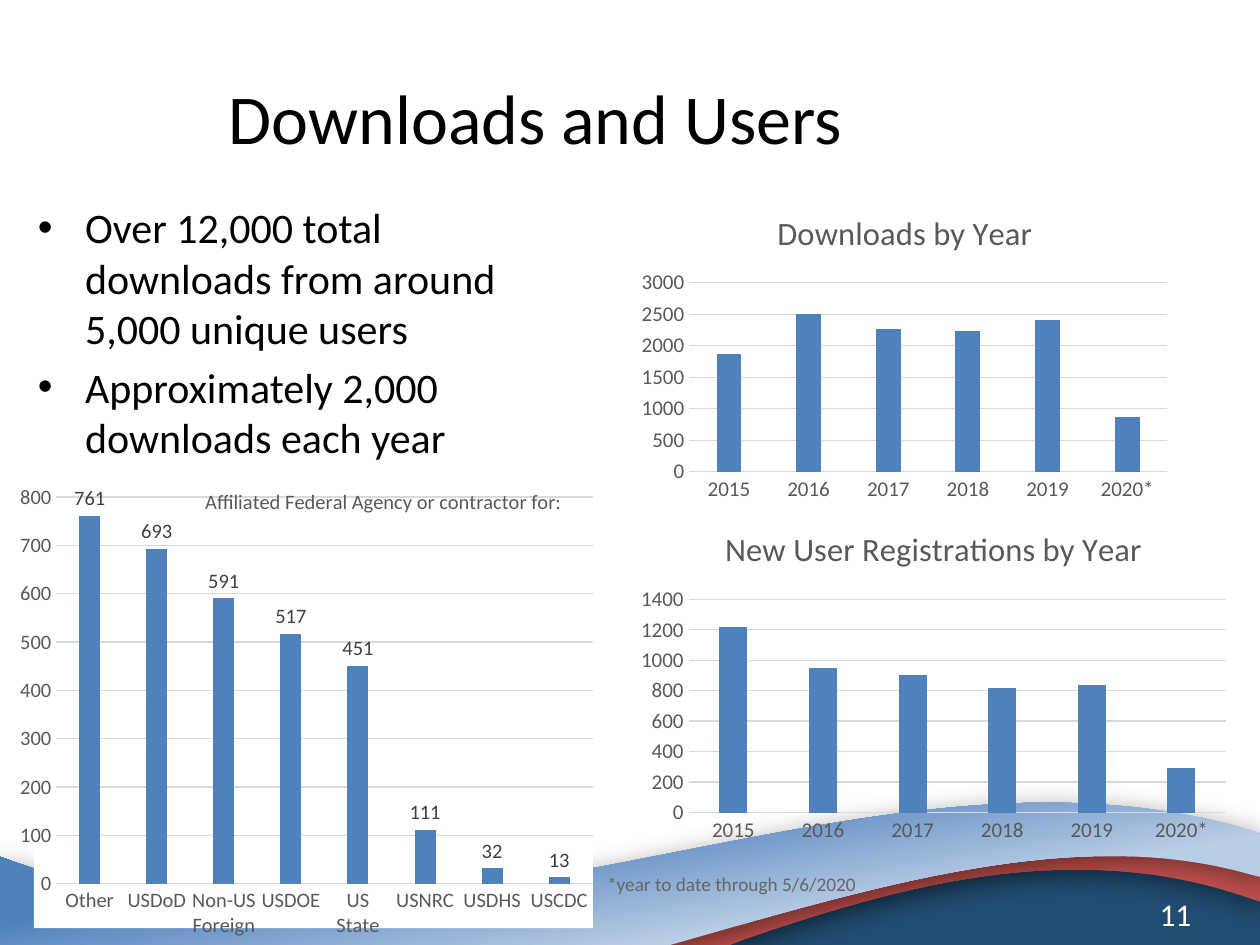
from lxml import etree
from pptx import Presentation
from pptx import util as u
from pptx.chart.data import CategoryChartData
from pptx.dml.color import RGBColor
from pptx.enum import chart as ch, text as tx
from pptx.oxml import parse_xml
from pptx.oxml.ns import nsdecls, qn

BLACK = RGBColor(0, 0, 0)
WHITE = RGBColor(255, 255, 255)
GRAY = RGBColor(0x59, 0x59, 0x59)
DARK = RGBColor(0x40, 0x40, 0x40)
NOTE = RGBColor(0x66, 0x66, 0x66)
GRID = RGBColor(0xD9, 0xD9, 0xD9)
BLUE = RGBColor(0x4F, 0x81, 0xBD)
PALE = RGBColor(0xB9, 0xCD, 0xE5)
RED = RGBColor(0xC0, 0x50, 0x4D)
WINE = RGBColor(0x95, 0x37, 0x35)
SKY = RGBColor(0x55, 0x8E, 0xD5)
NAVY = RGBColor(0x21, 0x4D, 0x71)

deck = Presentation()
deck.slide_width, deck.slide_height = u.Inches(10), u.Inches(7.5)
UNIT = deck.slide_width / 100
slide = deck.slides.add_slide(deck.slide_layouts[1])


def span(*cells):
    return [round(cell * UNIT) for cell in cells]


def style(font, size, color):
    font.name, font.size, font.bold = "Calibri", u.Pt(size), False
    font.color.rgb = color


waves = [
    ([(7.9, 70.8), (29.1, 74.2, 35.6, 75, 72.3, 67.3),
      (87.7, 67.3, 104.5, 67.1, 100.4, 69.5), (100.4, 75), (7.9, 75)],
     [(SKY, 0.21), (NAVY, 0.51)], 300),
    ([(84.5, 66.5), (85.4, 66.4, 86.2, 66.5, 87, 66.5),
      (91.3, 66.6, 95.4, 67, 99.2, 67.9), (100.4, 68.2), (100.4, 71.7),
      (98.9, 71.2), (85.4, 66.6, 72.2, 70, 59.2, 74.5), (57.9, 75),
      (7.9, 75), (7.9, 70.4), (8, 70.4), (26.4, 78.4, 58.6, 66.7, 84.5, 66.5)],
     [(RED, 0.28), (WINE, 0.62)], 100),
    ([(83.7, 63.7), (89.2, 63.8, 94.6, 64.4, 99.9, 66.1), (100.4, 66.3),
      (100.4, 69.7), (99.2, 69.4), (86.9, 65.9, 73.2, 69.3, 58.8, 73.4),
      (53.2, 75), (0, 75), (0, 68), (1.7, 68.6),
      (28.9, 78, 57.4, 63.6, 83.7, 63.7)],
     [(PALE, 0.3), (BLUE, 0.67)], 100),
]
for parts, stops, angle in waves:
    path = [span(*part[-2:]) for part in parts]
    pen = slide.shapes.build_freeform(*path[0])
    pen.add_line_segments(path[1:], close=True)
    wave = pen.convert_to_shape()
    lines = wave._element.findall(".//" + qn("a:lnTo"))
    for line, part in zip(lines, parts[1:]):
        if len(part) == 6:
            line.tag = qn("a:cubicBezTo")
            for i in (0, 2):
                x, y = span(*part[i:i + 2])
                dot = etree.Element(qn("a:pt"), x=str(x - wave.left), y=str(y - wave.top))
                line.insert(i // 2, dot)
    wave.line.fill.background()
    wave.fill.gradient()
    wave.fill.gradient_angle = angle
    for stop, (color, place) in zip(wave.fill.gradient_stops, stops):
        stop.color.rgb, stop.position = color, place
    wave.shadow.inherit = False
    glow = wave._element.spPr.find(qn("a:effectLst"))
    glow.append(parse_xml(
        f'<a:outerShdw {nsdecls("a")} blurRad="190500" dist="38100" dir="5400000" rotWithShape="0">'
        '<a:srgbClr val="000000"><a:alpha val="40000"/></a:srgbClr></a:outerShdw>'))

title = slide.shapes.title
title.left, title.top, title.width, title.height = span(5, 3, 75, 12.5)
title.text_frame.text = "Downloads and Users"
title.text_frame.vertical_anchor = tx.MSO_ANCHOR.MIDDLE
title.text_frame.paragraphs[0].alignment = tx.PP_ALIGN.CENTER
style(title.text_frame.paragraphs[0].font, 40, BLACK)

body = slide.placeholders[1]
body.left, body.top, body.width, body.height = span(2, 15.5, 40.8, 38.3)
body.text_frame.text = ("Over 12,000 total downloads from around 5,000 unique users\n"
                        "Approximately 2,000 downloads each year")
for para in body.text_frame.paragraphs:
    style(para.font, 24, BLACK)
body.text_frame.paragraphs[0].space_before = u.Pt(0)

years = ["2015", "2016", "2017", "2018", "2019", "2020*"]
groups = ["Other", "USDoD", "Non-US Foreign", "USDOE", "US State", "USNRC", "USDHS", "USCDC"]
charts = [
    ("Affiliated Federal Agency or contractor for:", 12, (1.6, 38.4, 45.5, 36), groups,
     [761, 693, 591, 517, 451, 111, 32, 13], 800, 100, (0.3, 0), (0.06, 0.03, 0.96, 0.87)),
    ("Downloads by Year", 18.6, (49.9, 15.2, 43.6, 25), years,
     [1870, 2510, 2260, 2240, 2410, 860], 3000, 500, (0.26, 0.04), (0.11, 0.29, 0.87, 0.6)),
    ("New User Registrations by Year", 18.6, (49.8, 40.2, 48.5, 27.3), years,
     [1220, 950, 900, 820, 840, 290], 1400, 200, (0.15, 0.04), (0.1, 0.27, 0.88, 0.62)),
]
for name, size, area, cats, vals, top, gap, spot, inner in charts:
    data = CategoryChartData()
    data.categories = cats
    data.add_series("Series 1", vals)
    chart = slide.shapes.add_chart(ch.XL_CHART_TYPE.COLUMN_CLUSTERED, *span(*area), data).chart
    style(chart.font, 10, BLACK)
    chart.has_legend = False
    chart.has_title = True
    head = chart.chart_title
    head.text_frame.text = name
    style(head.text_frame.paragraphs[0].font, size, GRAY)
    head.include_in_layout = False

    for axis in (chart.category_axis, chart.value_axis):
        axis.major_tick_mark = axis.minor_tick_mark = ch.XL_TICK_MARK.NONE
        style(axis.tick_labels.font, 12, GRAY)
        turn = axis._element.find(qn("c:txPr")).find(qn("a:bodyPr"))
        turn.set("rot", "-60000000")
        turn.set("vert", "horz")
    scale = chart.value_axis
    scale.minimum_scale, scale.maximum_scale, scale.major_unit = 0, top, gap
    scale.format.line.fill.background()
    for line in (scale.major_gridlines.format.line, chart.category_axis.format.line):
        line.color.rgb, line.width = GRID, u.Pt(0.75)

    plot = chart.plots[0]
    plot.gap_width, plot.overlap, plot.vary_by_categories = 219, -27, False
    bars = plot.series[0].format.fill
    bars.solid()
    bars.fore_color.rgb = BLUE

    root = chart._chartSpace
    for tag, place in (("c:title", spot), ("c:plotArea", inner)):
        node = root.find(".//" + qn(tag))
        for old in node.findall(qn("c:layout")):
            node.remove(old)
        layout = etree.Element(qn("c:layout"))
        node.insert(1 if tag == "c:title" else 0, layout)
        manual = etree.SubElement(layout, qn("c:manualLayout"))
        rules = [("xMode", "edge"), ("yMode", "edge"), *zip("xywh", place)]
        if tag == "c:plotArea":
            rules.insert(0, ("layoutTarget", "inner"))
        for key, val in rules:
            etree.SubElement(manual, qn("c:" + key)).set("val", str(val))

    if cats is groups:
        plot.has_data_labels = True
        marks = plot.data_labels
        marks.show_value = True
        marks.position = ch.XL_LABEL_POSITION.OUTSIDE_END
        style(marks.font, 12, DARK)
        root.find(qn("c:chart")).addnext(parse_xml(
            f'<c:spPr {nsdecls("c", "a")}><a:solidFill><a:srgbClr val="{WHITE}"/>'
            '</a:solidFill><a:ln><a:noFill/></a:ln></c:spPr>'))

labels = [
    ("*year to date through 5/6/2020", (47.2, 68.7, 26.4, 2.9), 11, NOTE, tx.PP_ALIGN.LEFT, 0.05),
    ("11", (90.8, 70, 5, 5), 18, WHITE, tx.PP_ALIGN.CENTER, 0.1),
]
for words, area, size, color, side, pad in labels:
    frame = slide.shapes.add_textbox(*span(*area)).text_frame
    frame.word_wrap = True
    frame.margin_top = frame.margin_bottom = u.Inches(pad)
    frame.text = words
    frame.paragraphs[0].alignment = side
    style(frame.paragraphs[0].font, size, color)

deck.save("out.pptx")
